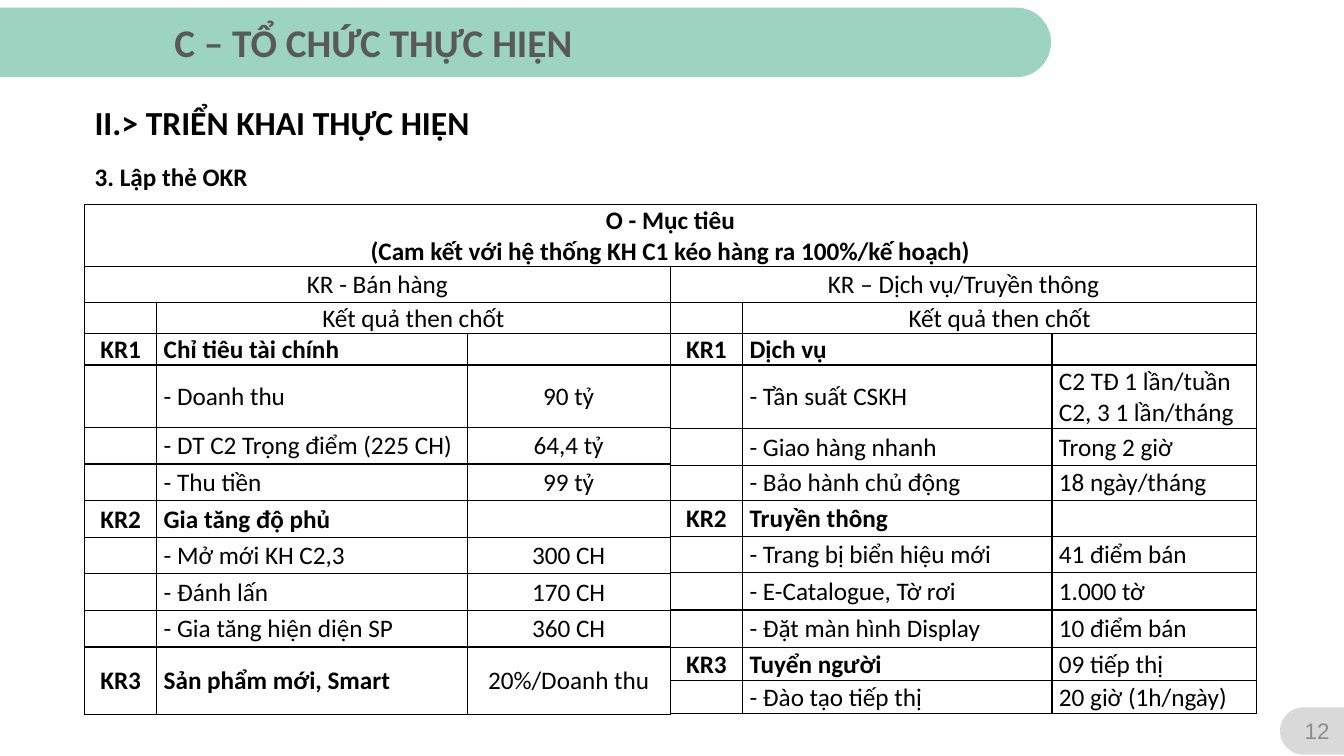
from lxml.etree import SubElement
from pptx import Presentation
from pptx.dml.color import RGBColor
from pptx.enum.shapes import MSO_SHAPE
from pptx.enum.text import MSO_ANCHOR, PP_ALIGN
from pptx.oxml.ns import qn
from pptx.util import Inches, Pt

LEFT, CENTER = PP_ALIGN.LEFT, PP_ALIGN.CENTER


def color(hex_code):
    return RGBColor.from_string(hex_code)


class OkrSlide:
    font = "Calibri"
    ink = "000000"
    paper = "FFFFFF"
    cell_size = 18
    border_width = Pt(1)

    def __init__(self, deck):
        self.slide = deck.slides.add_slide(deck.slide_layouts[6])
        self.column = deck.slide_width / 100
        self.row = deck.slide_height / 100

    def across(self, columns):
        return round(columns * self.column)

    def down(self, rows):
        return round(rows * self.row)

    def box(self, left, top, width, height):
        return self.across(left), self.down(top), self.across(width), self.down(height)

    def style(self, frame, size, hex_code, bold, align, font=None):
        for paragraph in frame.paragraphs:
            paragraph.alignment = align
            for face in [paragraph.font] + [run.font for run in paragraph.runs]:
                face.name = font or self.font
                face.size = Pt(size)
                face.bold = bold
                face.color.rgb = color(hex_code)

    def tab(self, area, rotation, hex_code):
        left, top, width, height = self.box(*area)
        shift = (width - height) // 2
        tab = self.slide.shapes.add_shape(
            MSO_SHAPE.ROUND_2_SAME_RECTANGLE, left + shift, top - shift, height, width)
        tab.rotation = rotation
        tab.adjustments[0] = 0.5
        tab.adjustments[1] = 0
        tab.shadow.inherit = False
        tab.fill.solid()
        tab.fill.fore_color.rgb = color(hex_code)
        tab.line.fill.background()

    def text(self, words, area, size, hex_code=ink, bold=True, align=LEFT,
             anchor=MSO_ANCHOR.TOP, font=None):
        frame = self.slide.shapes.add_textbox(*self.box(*area)).text_frame
        frame.word_wrap = True
        frame.vertical_anchor = anchor
        frame.text = words
        self.style(frame, size, hex_code, bold, align, font)

    def border(self, cell):
        properties = cell._tc.get_or_add_tcPr()
        for side in ("a:lnL", "a:lnR", "a:lnT", "a:lnB"):
            line = SubElement(properties, qn(side), w=str(self.border_width))
            fill = SubElement(line, qn("a:solidFill"))
            SubElement(fill, qn("a:srgbClr"), val=self.ink)

    def table(self, left, top, widths, heights, content, value_align=CENTER):
        area = self.box(left, top, sum(widths), sum(heights))
        grid = self.slide.shapes.add_table(len(heights), len(widths), *area).table
        grid.first_row = grid.horz_banding = False
        for column, width in zip(grid.columns, widths):
            column.width = self.across(width)
        for row, height in zip(grid.rows, heights):
            row.height = self.down(height)
        aligns = (CENTER, LEFT, value_align)
        for r, entries in enumerate(content):
            for c, words in enumerate(entries):
                cell = grid.cell(r, c)
                spans = None in entries[c + 1:] and words is not None
                align = CENTER if spans else aligns[c]
                self.border(cell)
                cell.fill.solid()
                cell.fill.fore_color.rgb = color(self.paper)
                cell.vertical_anchor = MSO_ANCHOR.MIDDLE
                cell.margin_left = Inches(0.07 if align == LEFT else 0.01)
                cell.margin_right = cell.margin_top = Inches(0.01)
                cell.margin_bottom = 0
                cell.text_frame.text = words or ""
                bold = c < 2 and all(entries[:2])
                self.style(cell.text_frame, self.cell_size, self.ink, bold, align)
                if spans and words:
                    cell.merge(grid.cell(r, len(entries) - 1))


SALES = [
    ("KR - Bán hàng", None, None),
    ("", "Kết quả then chốt", None),
    ("KR1", "Chỉ tiêu tài chính", ""),
    ("", "- Doanh thu", "90 tỷ"),
    ("", "- DT C2 Trọng điểm (225 CH)", "64,4 tỷ"),
    ("", "- Thu tiền", "99 tỷ"),
    ("KR2", "Gia tăng độ phủ", ""),
    ("", "- Mở mới KH C2,3", "300 CH"),
    ("", "- Đánh lấn", "170 CH"),
    ("", "- Gia tăng hiện diện SP", "360 CH"),
    ("KR3", "Sản phẩm mới, Smart", "20%/Doanh thu"),
]
SERVICE = [
    ("KR – Dịch vụ/Truyền thông", None, None),
    ("", "Kết quả then chốt", None),
    ("KR1", "Dịch vụ", ""),
    ("", "- Tần suất CSKH", "C2 TĐ 1 lần/tuần\nC2, 3 1 lần/tháng"),
    ("", "- Giao hàng nhanh", "Trong 2 giờ"),
    ("", "- Bảo hành chủ động", "18 ngày/tháng"),
    ("KR2", "Truyền thông", ""),
    ("", "- Trang bị biển hiệu mới", "41 điểm bán"),
    ("", "- E-Catalogue, Tờ rơi", "1.000 tờ"),
    ("", "- Đặt màn hình Display", "10 điểm bán"),
    ("KR3", "Tuyển người", "09 tiếp thị"),
    ("", "- Đào tạo tiếp thị", "20 giờ (1h/ngày)"),
]
OBJECTIVE = [("O - Mục tiêu\n(Cam kết với hệ thống KH C1 kéo hàng ra 100%/kế hoạch)",)]


def main():
    deck = Presentation()
    deck.slide_width, deck.slide_height = Inches(13.33), Inches(7.5)
    okr = OkrSlide(deck)
    okr.tab((0, 1, 78.2, 9.2), 90, "9CD4C1")
    okr.tab((95.24, 93.55, 4.76, 6.27), 270, "D9D9D9")
    okr.text("12", (96.15, 94, 3.7, 5.33), 16, "8C8C8C", False, CENTER,
             MSO_ANCHOR.MIDDLE, "Arial")
    okr.text("II.> TRIỂN KHAI THỰC HIỆN", (6.3, 12.8, 60.6, 6.67), 24)
    okr.text("3. Lập thẻ OKR", (6.3, 20.67, 76.9, 5.33), 18, anchor=MSO_ANCHOR.MIDDLE)
    margin, objective_top, results_top = 6.3, 27.07, 35.2
    okr.table(margin, objective_top, [87.17], [results_top - objective_top], OBJECTIVE)
    head = [4.8, 4.13, 4.13]
    sales_widths = [5.36, 23.1, 15.11]
    okr.table(margin, results_top, sales_widths, head + [8.27] + [4.84] * 6 + [8.93], SALES)
    okr.table(margin + sum(sales_widths), results_top, [5.38, 23.02, 15.25],
              head + [8.4, 4.9, 4.6, 4.8, 4.8, 4.93, 4.93, 4.4, 4.4], SERVICE, LEFT)
    okr.text("C – TỔ CHỨC THỰC HIỆN", (12.23, 1.73, 60.6, 7.6), 28, "595959")
    deck.save("out.pptx")


if __name__ == "__main__":
    main()
